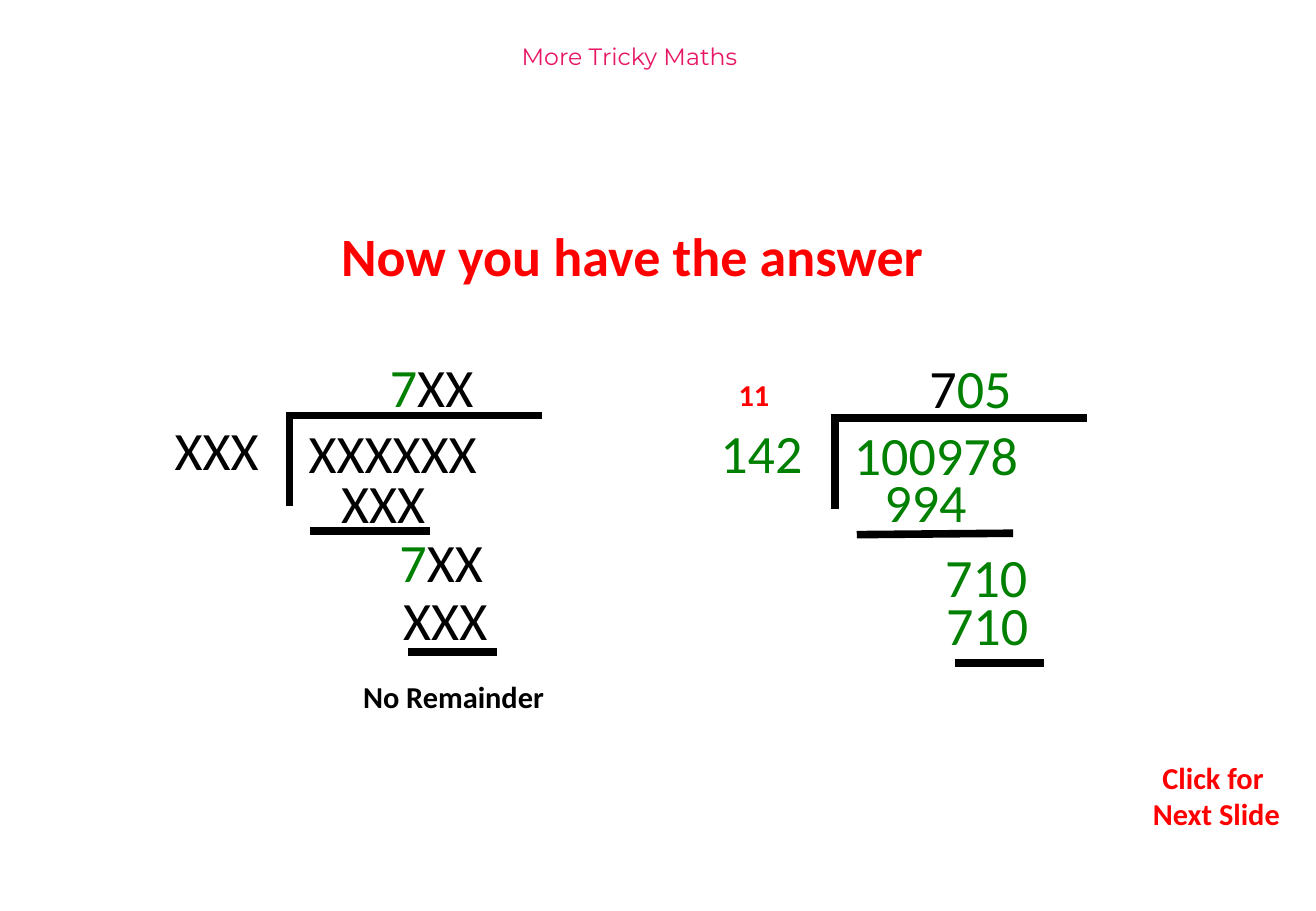
from lxml.etree import SubElement
from pptx import Presentation
from pptx.dml.color import RGBColor
from pptx.enum.shapes import MSO_CONNECTOR as Connector
from pptx.enum.text import MSO_AUTO_SIZE as AutoSize, PP_ALIGN as Align
from pptx.oxml.ns import qn
from pptx.util import Cm, Pt

BLACK = RGBColor(0x00, 0x00, 0x00)
GREEN = RGBColor(0x00, 0x80, 0x00)
RED = RGBColor(0xFF, 0x00, 0x00)
PINK = RGBColor(0xE8, 0x17, 0x66)

DIGITS = {"name": "Calibri", "size": Pt(32), "bold": False}
HEADING = {"name": "Calibri", "size": Pt(32), "bold": True}
LABEL = {"name": "Calibri", "size": Pt(18), "bold": True}
BANNER = {"name": "Montserrat", "size": Pt(14), "bold": False}

# Each number: left, top, width, coloured parts
LETTER_NUMBERS = [
    (3.4, 8.59, 2.29, [("XXX", BLACK)]),
    (6.2, 8.64, 4.06, [("XXXXXX", BLACK)]),
    (7.9, 7.26, 2.29, [("7", GREEN), ("XX", BLACK)]),
    (6.88, 9.7, 2.54, [("XXX", BLACK)]),
    (8.1, 10.92, 2.54, [("7", GREEN), ("XX", BLACK)]),
    (8.18, 12.14, 2.54, [("XXX", BLACK)]),
]
SOLVED_NUMBERS = [
    (14.81, 8.64, 2.26, [("142", GREEN)]),
    (17.6, 8.69, 3.99, [("100978", GREEN)]),
    (19.18, 7.29, 2.26, [("7", BLACK), ("05", GREEN)]),
    (18.24, 9.68, 2.51, [("994", GREEN)]),
    (19.51, 11.25, 2.26, [("710", GREEN)]),
    (19.53, 12.24, 2.26, [("710", GREEN)]),
]
# Each underline: start x, start y, end x, end y
LETTER_UNDERLINES = [(6.48, 11.1, 8.99, 11.1), (8.53, 13.64, 10.39, 13.64)]
SOLVED_UNDERLINES = [(17.91, 11.18, 21.18, 11.15), (19.96, 13.87, 21.82, 13.87)]


def add_text(slide, left, top, width, parts, style, height=1.63, align=Align.LEFT):
    box = slide.shapes.add_textbox(Cm(left), Cm(top), Cm(width), Cm(height))
    frame = box.text_frame
    frame.word_wrap = False
    frame.auto_size = AutoSize.SHAPE_TO_FIT_TEXT
    paragraph = frame.paragraphs[0]
    paragraph.alignment = align
    for words, color in parts:
        for number, line in enumerate(words.split("\n")):
            if number:
                paragraph.add_line_break()
            run = paragraph.add_run()
            run.text = line
            for key, value in style.items():
                setattr(run.font, key, value)
            run.font.color.rgb = color


def add_rule(slide, x1, y1, x2, y2):
    rule = slide.shapes.add_connector(
        Connector.STRAIGHT, Cm(x1), Cm(y1), Cm(x2), Cm(y2))
    rule.line.color.rgb = BLACK
    rule.line.width = Pt(4.5)
    SubElement(rule.element.spPr, qn("a:effectLst"))


def add_division(slide, corner_x, corner_y, numbers, underlines):
    for left, top, width, parts in numbers:
        add_text(slide, left, top, width, parts, DIGITS)
    # Division bracket
    add_rule(slide, corner_x, corner_y, corner_x, corner_y + 1.9)
    add_rule(slide, corner_x - 0.08, corner_y, corner_x + 5.28, corner_y)
    for underline in underlines:
        add_rule(slide, *underline)


def main():
    deck = Presentation()
    deck.slide_width, deck.slide_height = Cm(27.51), Cm(19.05)
    slide = deck.slides.add_slide(deck.slide_layouts[6])

    # Banner and heading
    add_text(slide, 10.06, 0.76, 6.2, [("More Tricky Maths", PINK)], BANNER,
             height=1.47, align=Align.CENTER)
    add_text(slide, 6.88, 4.52, 12.8, [("Now you have the answer", RED)], HEADING)

    # Solved division with its carry
    add_division(slide, 17.45, 8.74, SOLVED_NUMBERS, SOLVED_UNDERLINES)
    add_text(slide, 15.19, 7.75, 1.32, [("11", RED)], LABEL, height=1.02)

    # Letter puzzle with its remark
    add_division(slide, 6.05, 8.69, LETTER_NUMBERS, LETTER_UNDERLINES)
    add_text(slide, 7.34, 14.05, 4.32, [("No Remainder", BLACK)], LABEL, height=1.02)

    # Prompt
    add_text(slide, 23.83, 15.75, 3.2, [("Click for \nNext Slide", RED)], LABEL,
             height=1.8, align=Align.CENTER)

    deck.save("out.pptx")


if __name__ == "__main__":
    main()
